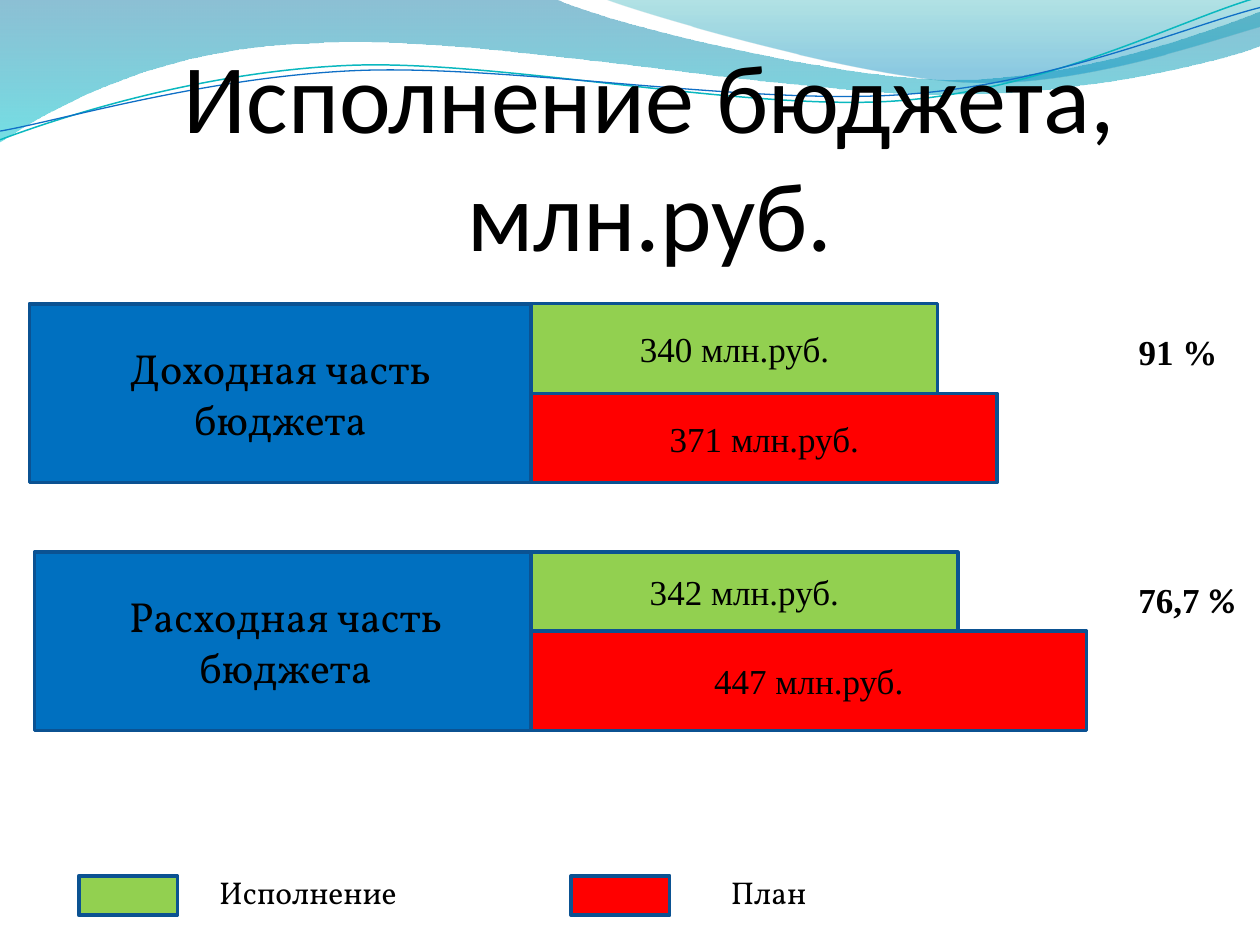
import pptx
import pptx.util
import pptx.dml.color
import pptx.enum.shapes
import pptx.enum.text
import lxml.etree

Pt = pptx.util.Pt
ALIGN = pptx.enum.text.PP_ALIGN
ANCHOR = pptx.enum.text.MSO_ANCHOR
NS = "{http://schemas.openxmlformats.org/drawingml/2006/main}"
COLORS = {
    "text": "000000", "label": "0070C0", "done": "92D050", "plan": "FF0000",
    "border": "0B5292", "teal_line": "0AB8BF", "blue_line": "0F6FC6",
    "deep_blue": "0074A1", "cyan": "00C6CF", "teal": "00A1A9", "sky": "008BBF",
}
SERIF, HEADING = "Times New Roman", "Vollkorn"

WAVE_LEFT = [
    [(0, 0)], [(317, -0.7)],
    [(342.7, 12.2), (478, 45.4), (545.8, 45.4)],
    [(614, 45.4), (689.8, 18.7), (720, 6.5)], [(720.7, 25.9)],
    [(707.8, 31.7), (626.4, 54.7), (537.1, 54)],
    [(447.8, 54), (275, 20.2), (185, 24.5)],
    [(92.9, 25.9), (33.1, 59.8), (-0.7, 81.4)], [(0, 0)],
]
WAVE_RIGHT = [
    [(344.9, -0.7)],
    [(366.5, 7.9), (491, 44.6), (553.7, 46.8)],
    [(616.3, 49.7), (691.9, 23), (720, 15.1)], [(720, 0)], [(344.9, -0.7)],
]
TEAL_CURVE = [
    [(0, 79.9)],
    [(34.6, 67), (113.8, 41), (199.4, 37.4)],
    [(284.4, 33.8), (427, 64.1), (513.4, 57.6)],
    [(599.8, 51.1), (675.4, 10.8), (718.6, -1.4)],
]
BLUE_CURVE = [
    [(0, 74.9)],
    [(33.8, 69.1), (118.1, 43.9), (203.8, 40.3)],
    [(290.2, 36.7), (429.8, 60.5), (516.2, 54)],
    [(601.9, 48.2), (677.5, 15.1), (720, 4.3)],
]


def rgb(name):
    """Return the named palette colour."""
    return pptx.dml.color.RGBColor.from_string(COLORS[name])


def add_path(s, segments, close):
    """Draw a freeform whose three-point segments are cubic curves."""
    points = [(Pt(x), Pt(y)) for seg in segments for x, y in seg]
    fb = s.shapes.build_freeform(*points[0], scale=1.0)
    fb.add_line_segments(points[1:], close=close)
    sp = fb.convert_to_shape()
    sp.shadow.inherit = False
    lines = iter(list(sp._element.iter(NS + "lnTo")))
    for seg in segments[1:]:
        first, *rest = [next(lines) for _ in seg]
        if rest:
            curve = lxml.etree.Element(NS + "cubicBezTo")
            first.addprevious(curve)
            for line in (first, *rest):
                curve.append(line[0])
                line.getparent().remove(line)
    return sp


def add_wave(s, segments, stops):
    """Fill a closed wave with a translucent vertical gradient."""
    sp = add_path(s, segments, True)
    sp.line.fill.background()
    sp.fill.gradient()
    sp.fill.gradient_angle = 270
    for stop, (position, color, _) in zip(sp.fill.gradient_stops, stops):
        stop.position = position
        stop.color.rgb = rgb(color)
    for clr, (_, _, alpha) in zip(sp._element.iter(NS + "srgbClr"), stops):
        lxml.etree.SubElement(clr, NS + "alpha").set("val", str(alpha * 1000))


def add_curve(s, segments, color, width):
    """Draw an open thin curve."""
    sp = add_path(s, segments, False)
    sp.fill.background()
    sp.line.color.rgb = rgb(color)
    sp.line.width = Pt(width)


def style_run(r, size, font, bold=False):
    """Format a run in the text colour."""
    r.font.size, r.font.name, r.font.bold = Pt(size), font, bold
    r.font.color.rgb = rgb("text")


def add_block(s, box, color, text="", size=20, font=SERIF):
    """Add a bordered rectangle with centred text."""
    rect = pptx.enum.shapes.MSO_SHAPE.RECTANGLE
    sp = s.shapes.add_shape(rect, *map(Pt, box))
    sp.shadow.inherit = False
    sp.fill.solid()
    sp.fill.fore_color.rgb = rgb(color)
    sp.line.color.rgb = rgb("border")
    sp.line.width = Pt(2)
    tf = sp.text_frame
    tf.vertical_anchor = ANCHOR.MIDDLE
    if text:
        p = tf.paragraphs[0]
        p.text, p.alignment = text, ALIGN.CENTER
        style_run(p.runs[0], size, font)


def add_text(s, box, parts, size, bold=False, wrap=True, align=ALIGN.LEFT):
    """Add a text box made of (text, font) parts."""
    tf = s.shapes.add_textbox(*map(Pt, box)).text_frame
    tf.word_wrap = wrap
    tf.auto_size = pptx.enum.text.MSO_AUTO_SIZE.SHAPE_TO_FIT_TEXT
    p = tf.paragraphs[0]
    p.alignment = align
    for text, font in parts:
        r = p.add_run()
        r.text = text
        style_run(r, size, font, bold)


def add_background(s):
    """Draw the waves and curves along the top edge."""
    add_wave(s, WAVE_LEFT, [(0, "deep_blue", 45), (1, "cyan", 55)])
    add_wave(s, WAVE_RIGHT, [(0, "teal", 30), (0.8, "sky", 45)])
    add_curve(s, TEAL_CURVE, "teal_line", 0.85)
    add_curve(s, BLUE_CURVE, "blue_line", 0.75)


def add_budget_row(s, box, label, bar_x, done, plan, percent, percent_w):
    """Draw a label, its two stacked bars and the percentage."""
    x, y, w, h = box
    done_text, done_w, done_h = done
    plan_text, plan_w = plan
    add_block(s, (x, y, w, h), "label", label, 24, HEADING)
    add_block(s, (bar_x, y, done_w, done_h), "done", done_text)
    add_block(s, (bar_x, y + done_h, plan_w, h - done_h), "plan", plan_text)
    add_text(s, (643.5, y + 11.5, percent_w, 31.5), percent, 20, True, False)


def add_legend_item(s, box, color, text, text_x, text_w):
    """Draw a legend swatch and its caption."""
    x, y, w, h = box
    add_block(s, box, color)
    add_text(s, (text_x, y - 5.3, text_w, 29), [(text, HEADING)], 18)


def main():
    """Build the budget slide."""
    prs = pptx.Presentation()
    prs.slide_width, prs.slide_height = Pt(720), Pt(540)
    s = prs.slides.add_slide(prs.slide_layouts[6])
    add_background(s)
    add_budget_row(s, (16.8, 173.6, 286.8, 102.2), "Доходная часть бюджета", 303.8,
                   ("340 млн.руб.", 232, 51.2), ("371 млн.руб.", 266),
                   [("91 %", SERIF)], 60)
    add_budget_row(s, (19.8, 315.5, 286.8, 102), "Расходная часть бюджета", 303.4,
                   ("342 млн.руб.", 244, 45), ("447 млн.руб.", 317.5),
                   [("76,7", SERIF), (" %", HEADING)], 72)
    add_legend_item(s, (45, 500.5, 56.5, 22.5), "done", "Исполнение", 118.2, 129.5)
    add_legend_item(s, (326.2, 500.5, 56.5, 22.5), "plan", "План", 410.5, 118)
    add_text(s, (45, 16.8, 652.8, 143.5),
             [("Исполнение бюджета, млн.руб.", "Calibri")], 56, align=ALIGN.CENTER)
    prs.save("out.pptx")


if __name__ == "__main__":
    main()
